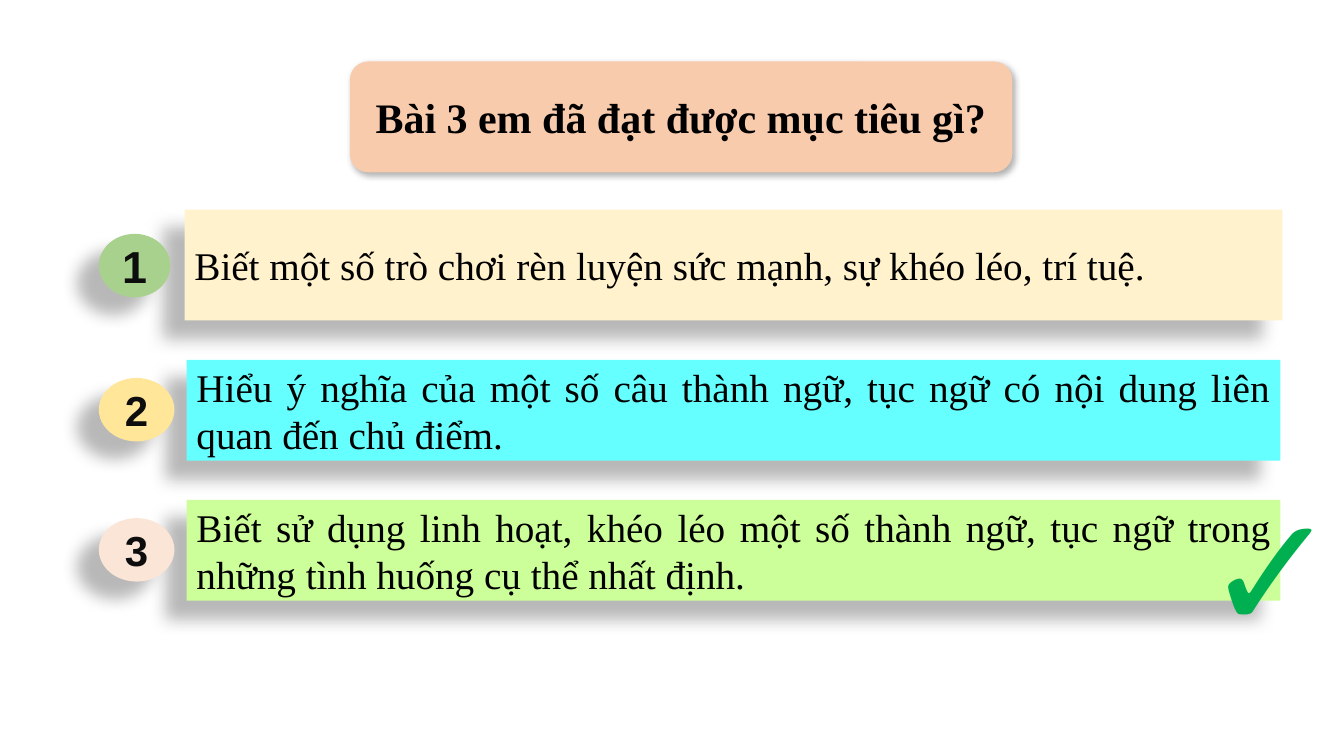
from dataclasses import dataclass

from lxml.etree import SubElement
from pptx import Presentation
from pptx.dml.color import RGBColor
from pptx.enum.shapes import MSO_SHAPE as Preset
from pptx.enum.text import MSO_ANCHOR as Anchor, PP_ALIGN as Align
from pptx.oxml.ns import qn
from pptx.shapes.autoshape import Shape
from pptx.text.text import TextFrame
from pptx.util import Inches, Pt


@dataclass(frozen=True)
class Theme:
    serif: str = "Times New Roman"
    sans: str = "Arial"
    symbol: str = "Calibri"
    ink: str = "000000"
    number_ink: str = "0D0D0D"
    title_fill: str = "F8CBAD"
    check: str = "00B050"
    title_size: int = 30
    goal_size: int = 28
    check_size: int = 115


@dataclass(frozen=True)
class Area:
    left: float
    top: float
    width: float
    height: float

    def lengths(self) -> list[Inches]:
        return [Inches(v) for v in (self.left, self.top, self.width, self.height)]


@dataclass(frozen=True)
class Shadow:
    """Blur and distance in points, angle in degrees, opacity in percent."""
    blur: float
    distance: float
    angle: int
    opacity: int


@dataclass(frozen=True)
class TextStyle:
    font: str
    size: int
    color: str
    bold: bool = False
    align: Align = Align.CENTER


@dataclass(frozen=True)
class Goal:
    text: str
    bar: Area
    bar_fill: str
    badge: Area
    badge_fill: str
    number_size: int


THEME = Theme()
DEEP_SHADOW = Shadow(11.8, 19.7, 141, 28)
SOFT_SHADOW = Shadow(4.5, 2.6, 53, 30)

GOALS = [
    Goal("Biết một số trò chơi rèn luyện sức mạnh, sự khéo léo, trí tuệ.",
         Area(1.83, 2.08, 10.89, 1.1), "FFF2CC",
         Area(0.98, 2.32, 0.71, 0.63), "A9D18E", 32),
    Goal("Hiểu ý nghĩa của một số câu thành ngữ, tục ngữ có nội dung "
         "liên quan đến chủ điểm.",
         Area(1.85, 3.57, 10.85, 1), "66FFFF",
         Area(0.98, 3.75, 0.75, 0.63), "FFE699", 30),
    Goal("Biết sử dụng linh hoạt, khéo léo một số thành ngữ, tục ngữ "
         "trong những tình huống cụ thể nhất định.",
         Area(1.85, 4.96, 10.85, 1), "CCFF99",
         Area(0.98, 5.14, 0.75, 0.63), "FBE5D6", 30),
]


def cast_shadow(shape: Shape, shadow: Shadow) -> None:
    shape.shadow.inherit = False
    effects = shape.fill._xPr.find(qn("a:effectLst"))
    outer = SubElement(effects, qn("a:outerShdw"), {
        "blurRad": str(Pt(shadow.blur)), "dist": str(Pt(shadow.distance)),
        "dir": str(shadow.angle * 60000), "algn": "ctr", "rotWithShape": "0"})
    color = SubElement(outer, qn("a:srgbClr"), val=THEME.ink)
    SubElement(color, qn("a:alpha"), val=str(shadow.opacity * 1000))


def write(frame: TextFrame, text: str, style: TextStyle) -> None:
    frame.word_wrap = True
    para = frame.paragraphs[0]
    para.text = text
    para.alignment = style.align
    para.font.name = style.font
    para.font.size = Pt(style.size)
    para.font.bold = style.bold
    para.font.color.rgb = RGBColor.from_string(style.color)


def add_panel(shapes, preset: Preset, area: Area, fill: str, shadow: Shadow,
              text: str, style: TextStyle) -> None:
    """Add a borderless filled shape with a shadow and centred-height text."""
    panel = shapes.add_shape(preset, *area.lengths())
    panel.fill.solid()
    panel.fill.fore_color.rgb = RGBColor.from_string(fill)
    panel.line.fill.background()
    cast_shadow(panel, shadow)
    panel.text_frame.vertical_anchor = Anchor.MIDDLE
    write(panel.text_frame, text, style)


def add_goal(page, number: int, goal: Goal) -> None:
    group = page.shapes.add_group_shape()
    add_panel(group.shapes, Preset.RECTANGLE, goal.bar, goal.bar_fill, DEEP_SHADOW,
              goal.text, TextStyle(THEME.serif, THEME.goal_size, THEME.ink,
                                   align=Align.JUSTIFY))
    add_panel(group.shapes, Preset.OVAL, goal.badge, goal.badge_fill, DEEP_SHADOW,
              str(number), TextStyle(THEME.sans, goal.number_size,
                                     THEME.number_ink, bold=True))


def main() -> None:
    deck = Presentation()
    deck.slide_width, deck.slide_height = Inches(13.33), Inches(7.5)
    page = deck.slides.add_slide(deck.slide_layouts[6])

    for number, goal in enumerate(GOALS, start=1):
        add_goal(page, number, goal)

    add_panel(page.shapes, Preset.ROUNDED_RECTANGLE, Area(3.47, 0.61, 6.57, 1.1),
              THEME.title_fill, SOFT_SHADOW, "Bài 3 em đã đạt được mục tiêu gì?",
              TextStyle(THEME.serif, THEME.title_size, THEME.ink, bold=True))

    check_box = page.shapes.add_textbox(*Area(11.85, 4.61, 1.12, 2.04).lengths())
    write(check_box.text_frame, "✓",
          TextStyle(THEME.symbol, THEME.check_size, THEME.check, align=Align.LEFT))

    deck.save("out.pptx")


if __name__ == "__main__":
    main()
